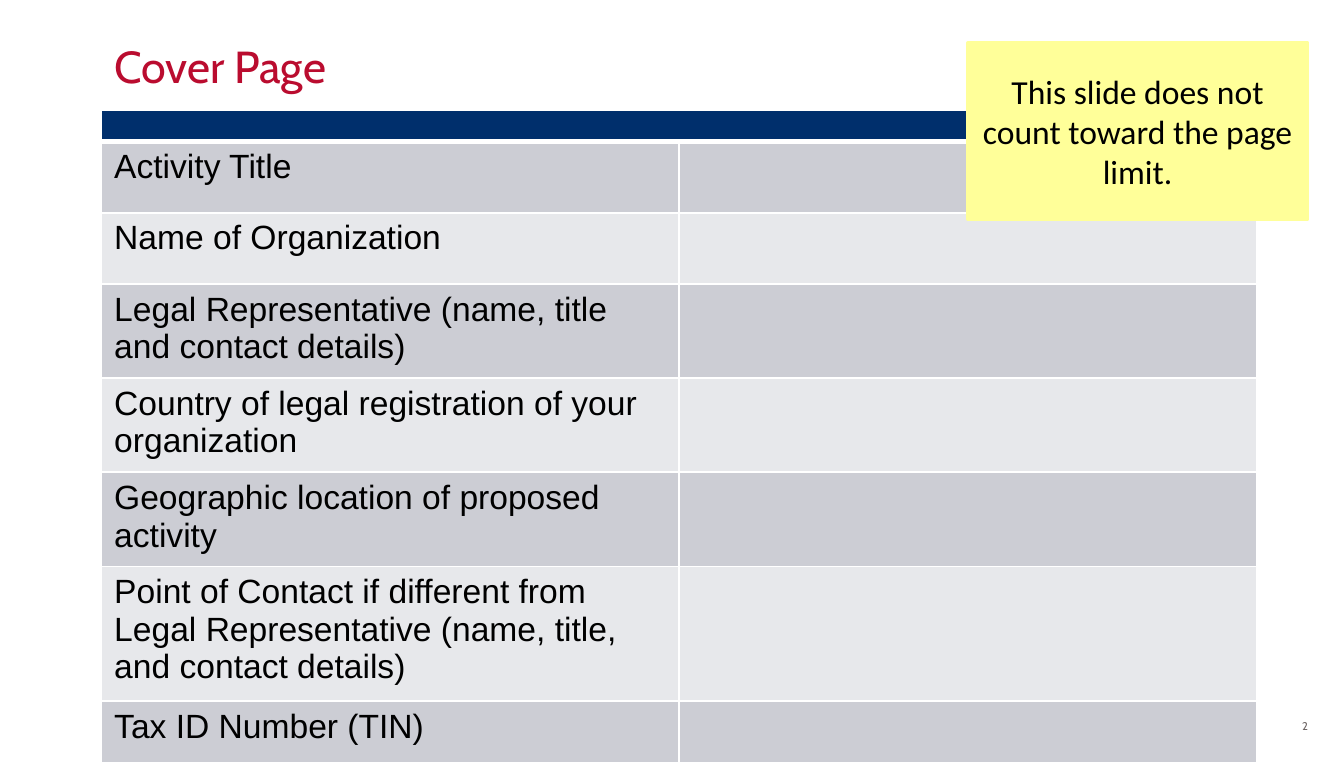
from dataclasses import dataclass

from lxml import etree
from pptx import Presentation
from pptx.dml.color import RGBColor
from pptx.enum.shapes import MSO_SHAPE
from pptx.enum.text import MSO_ANCHOR, PP_ALIGN
from pptx.oxml.ns import qn
from pptx.util import Emu, Pt

EMU_PER_PX = 9144  # 100 px to the inch
EMU_PER_POINT = 12700

RECTANGLE = MSO_SHAPE.RECTANGLE
MIDDLE, BOTTOM = MSO_ANCHOR.MIDDLE, MSO_ANCHOR.BOTTOM
LEFT, CENTER, RIGHT = PP_ALIGN.LEFT, PP_ALIGN.CENTER, PP_ALIGN.RIGHT

WHITE = RGBColor(0xFF, 0xFF, 0xFF)
BLACK = RGBColor(0x00, 0x00, 0x00)
RED = RGBColor(0xBA, 0x0C, 0x2F)
NAVY = RGBColor(0x00, 0x2F, 0x6C)
GRAY = RGBColor(0x6C, 0x64, 0x63)
YELLOW = RGBColor(0xFF, 0xFF, 0x99)
BANDS = (RGBColor(0xCC, 0xCD, 0xD4), RGBColor(0xE7, 0xE8, 0xEB))


@dataclass(frozen=True)
class TextStyle:
    font: str
    size: int
    color: RGBColor
    alignment: PP_ALIGN = LEFT


@dataclass(frozen=True)
class FormRow:
    label: str
    height: int


TITLE_STYLE = TextStyle("Cabin", 24, RED)
LABEL_STYLE = TextStyle("Arial", 18, BLACK)
NOTE_STYLE = TextStyle("Calibri", 18, BLACK, CENTER)
NUMBER_STYLE = TextStyle("Cabin", 6, GRAY, RIGHT)

HEADER_HEIGHT = 22
COLUMN_WIDTH = 430
FORM_ROWS = (
    FormRow("Activity Title", 53),
    FormRow("Name of Organization", 53),
    FormRow("Legal Representative (name, title and contact details)", 63),
    FormRow("Country of legal registration of your organization", 63),
    FormRow("Geographic location of proposed activity", 63),
    FormRow("Point of Contact if different from Legal Representative "
            "(name, title, and contact details)", 89),
    FormRow("Tax ID Number (TIN)", 53),
)


def px(length: int) -> Emu:
    return Emu(length * EMU_PER_PX)


def box(left: int, top: int, width: int, height: int) -> tuple[Emu, ...]:
    return px(left), px(top), px(width), px(height)


def write(text_frame, text: str, style: TextStyle) -> None:
    text_frame.word_wrap = True
    paragraph = text_frame.paragraphs[0]
    paragraph.alignment = style.alignment
    run = paragraph.add_run()
    run.text = text
    run.font.name = style.font
    run.font.size = Pt(style.size)
    run.font.bold = False
    run.font.color.rgb = style.color


def format_cell(cell, fill: RGBColor, bottom_width: int = 1, top_width: int = 1) -> None:
    """Give a cell its white borders, then its fill, in schema order."""
    properties = cell._tc.get_or_add_tcPr()
    widths = {"a:lnL": 1, "a:lnR": 1, "a:lnT": top_width, "a:lnB": bottom_width}
    for tag, width in widths.items():
        line = etree.SubElement(properties, qn(tag), w=str(width * EMU_PER_POINT))
        solid = etree.SubElement(line, qn("a:solidFill"))
        etree.SubElement(solid, qn("a:srgbClr"), val=str(WHITE))
    cell.fill.solid()
    cell.fill.fore_color.rgb = fill


def set_empty_size(cell, size: int) -> None:
    """Set the text size that an empty cell uses for its height."""
    paragraph = cell.text_frame.paragraphs[0]._p
    etree.SubElement(paragraph, qn("a:endParaRPr"), sz=str(size * 100))


def add_title(slide) -> None:
    title = slide.shapes.title
    title.left, title.top, title.width, title.height = box(75, 24, 850, 50)
    title.text_frame.vertical_anchor = BOTTOM
    write(title.text_frame, "Cover Page", TITLE_STYLE)


def add_form(slide) -> None:
    height = HEADER_HEIGHT + sum(row.height for row in FORM_ROWS)
    table = slide.shapes.add_table(
        len(FORM_ROWS) + 1, 2, *box(75, 82, 2 * COLUMN_WIDTH, height)).table
    table.first_row = False
    table.horz_banding = False
    for column in table.columns:
        column.width = px(COLUMN_WIDTH)

    table.rows[0].height = px(HEADER_HEIGHT)
    for cell in table.rows[0].cells:
        format_cell(cell, NAVY, bottom_width=3)
        set_empty_size(cell, 8)
    table.cell(0, 0).merge(table.cell(0, 1))

    for index, row in enumerate(FORM_ROWS):
        table_row = table.rows[index + 1]
        table_row.height = px(row.height)
        for cell in table_row.cells:
            format_cell(cell, BANDS[index % 2], top_width=1 if index else 3)
        write(table_row.cells[0].text_frame, row.label, LABEL_STYLE)


def add_note(slide) -> None:
    note = slide.shapes.add_shape(RECTANGLE, *box(720, 32, 253, 131))
    note.shadow.inherit = False
    note.fill.solid()
    note.fill.fore_color.rgb = YELLOW
    note.line.color.rgb = YELLOW
    note.line.width = Pt(2)
    note.text_frame.vertical_anchor = MIDDLE
    write(note.text_frame, "This slide does not count toward the page limit.", NOTE_STYLE)


def add_slide_number(slide) -> None:
    number = slide.shapes.add_textbox(*box(750, 530, 233, 20))
    number.text_frame.vertical_anchor = MIDDLE
    write(number.text_frame, "2", NUMBER_STYLE)


def main() -> None:
    presentation = Presentation()
    presentation.slide_width, presentation.slide_height = px(1000), px(567)
    slide = presentation.slides.add_slide(presentation.slide_layouts[5])
    add_slide_number(slide)
    add_title(slide)
    add_form(slide)
    add_note(slide)
    presentation.save("out.pptx")


if __name__ == "__main__":
    main()
